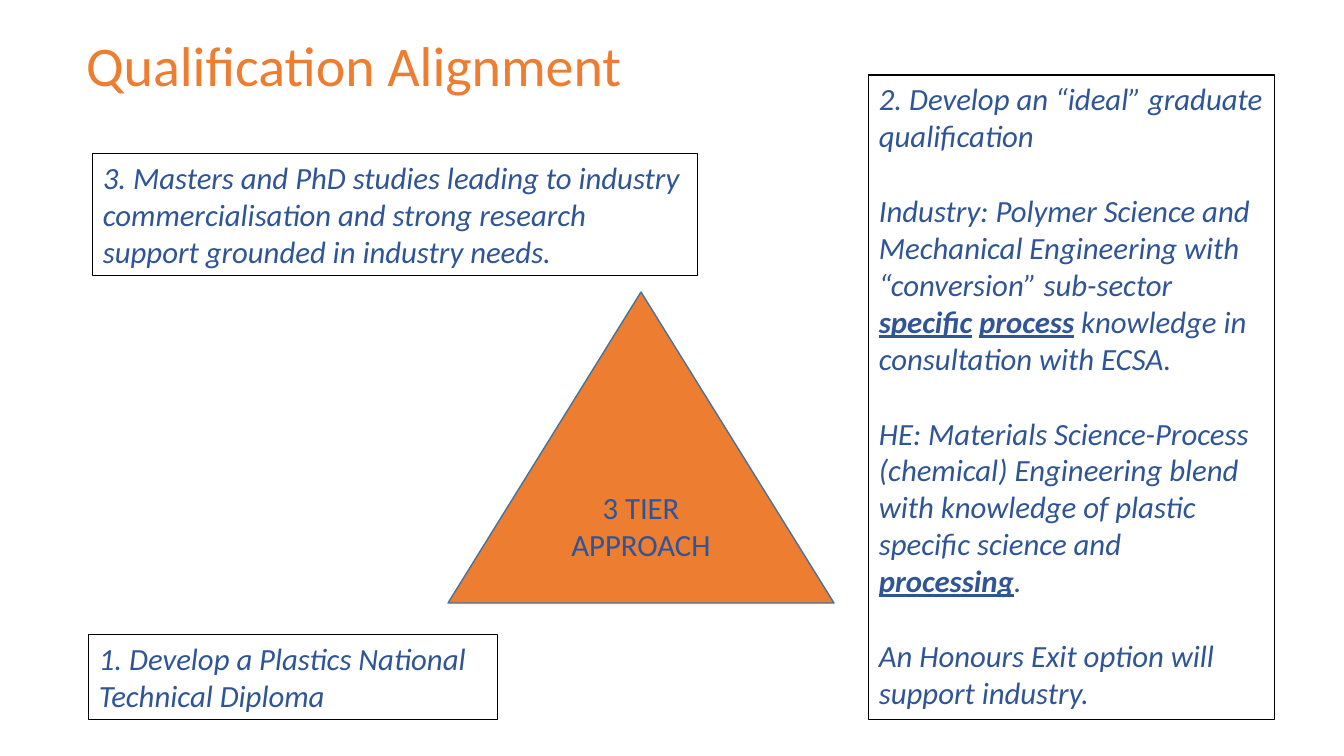
"""Build the Qualification Alignment slide."""
from pptx import Presentation
from pptx.dml.color import RGBColor
from pptx.enum.shapes import MSO_SHAPE as Shape
from pptx.enum.text import MSO_ANCHOR as Anchor, MSO_AUTO_SIZE as Fit, PP_ALIGN as Align
from pptx.util import Pt

ORANGE = RGBColor(0xED, 0x7D, 0x31)
BLUE = RGBColor(0x2F, 0x55, 0x97)
EDGE = RGBColor(0x43, 0x73, 0x9E)
BLACK = RGBColor(0, 0, 0)
PX = 914400 / 100.8
FONT = "Calibri"

SIZE = (1344, 756)
TITLE = ("Qualification Alignment", (76, 25, 719, 78))
TIER = ("3 TIER APPROACH", (448, 292, 386, 311))
BOXES = [
    ((89, 635, 409, 85), [["1. Develop a Plastics National Technical Diploma"]]),
    ((869, 75, 406, 645), [
        ["2. Develop an “ideal” graduate qualification"],
        ["Industry: Polymer Science and Mechanical Engineering with “conversion” sub-sector ",
         "specific", " ", "process", " knowledge in consultation with ECSA."],
        ["HE: Materials Science-Process (chemical) Engineering blend with knowledge of "
         "plastic specific science and ", "processing", "."],
        ["An Honours Exit option will support industry."],
    ]),
    ((93, 154, 605, 122), [["3. Masters and PhD studies leading to industry "
                          "commercialisation and strong research support grounded in "
                          "industry needs."]]),
]


def scale(nums):
    """Turn px lengths into EMU."""
    return [round(num * PX) for num in nums]


def write(shape, paras, size=22, color=BLUE, italic=False, align=Align.LEFT,
          anchor=Anchor.TOP, gap=27):
    """Fill a shape with paragraphs whose every second run is stressed."""
    frame = shape.text_frame
    frame.word_wrap = True
    frame.auto_size = Fit.NONE
    frame.vertical_anchor = anchor
    for row, parts in enumerate(paras):
        para = frame.add_paragraph() if row else frame.paragraphs[0]
        para.alignment = align
        para.space_before = Pt(gap if row else 0)
        for col, text in enumerate(parts):
            run = para.add_run()
            run.text = text
            font = run.font
            font.name, font.size, font.italic = FONT, Pt(size), italic
            font.color.rgb = color
            font.bold = font.underline = col % 2 == 1


def draw(slide, kind, place, edge, width, fill=None):
    """Add an outlined shape."""
    shape = slide.shapes.add_shape(kind, *scale(place))
    shape.shadow.inherit = False
    shape.line.color.rgb = edge
    shape.line.width = Pt(width)
    if fill is None:
        shape.fill.background()
    else:
        shape.fill.solid()
        shape.fill.fore_color.rgb = fill
    return shape


def main():
    """Build and save the slide."""
    deck = Presentation()
    deck.slide_width, deck.slide_height = scale(SIZE)
    slide = deck.slides.add_slide(deck.slide_layouts[5])

    text, place = TITLE
    title = slide.shapes.title
    title.left, title.top, title.width, title.height = scale(place)
    write(title, [[text]], size=40, color=ORANGE)

    text, place = TIER
    tier = draw(slide, Shape.ISOSCELES_TRIANGLE, place, EDGE, 1, ORANGE)
    write(tier, [[text]], align=Align.CENTER, anchor=Anchor.MIDDLE)

    for place, paras in BOXES:
        write(draw(slide, Shape.RECTANGLE, place, BLACK, 0.75), paras, italic=True)

    deck.save("out.pptx")


if __name__ == "__main__":
    main()
